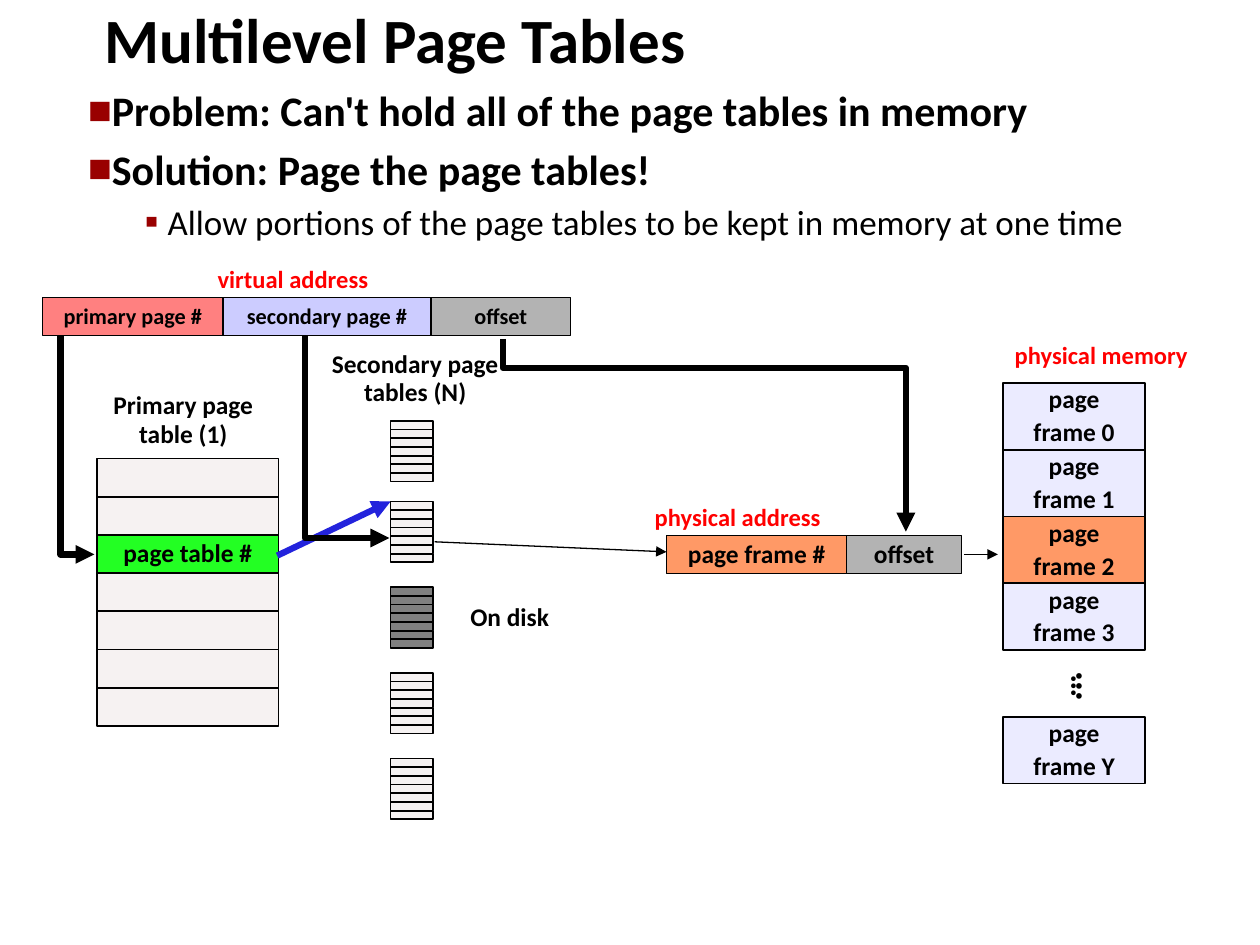
from lxml import etree
from pptx import Presentation
from pptx.dml.color import RGBColor
from pptx.enum.shapes import MSO_CONNECTOR, MSO_SHAPE
from pptx.enum.text import MSO_ANCHOR, MSO_AUTO_SIZE, PP_ALIGN
from pptx.oxml.ns import qn
from pptx.util import Inches, Pt

RECT, STRAIGHT = MSO_SHAPE.RECTANGLE, MSO_CONNECTOR.STRAIGHT
TOP, MIDDLE = MSO_ANCHOR.TOP, MSO_ANCHOR.MIDDLE
LEFT, CENTER = PP_ALIGN.LEFT, PP_ALIGN.CENTER
NO_FIT = MSO_AUTO_SIZE.NONE

# Content
FONT = "Calibri"
BLACK, RED, BLUE, MAROON = "000000", "FF0000", "2323DC", "990000"
PALE, GREY, DISK, LILAC, ORANGE, GREEN = (
    "F6F2F2", "B3B3B3", "808080", "EBEBFF", "FF9966", "23FF23")

TITLE = "Multilevel Page Tables"
# text, level, points, bullet, bullet size %, indent, hanging
POINTS = [
    ("Problem: Can't hold all of the page tables in memory", 0, 24, "■", 60, 0.28, 0.17),
    ("Solution: Page the page tables!", 0, 24, "■", 60, 0.28, 0.17),
    ("Allow portions of the page tables to be kept in memory at one time",
     1, 20, "▪", 110, 0.74, 0.18),
]
VIRTUAL_ADDRESS = [("primary page #", 1.43, "FF8080"),
                   ("secondary page #", 1.65, "CCCCFF"), ("offset", 1.11, GREY)]
PHYSICAL_ADDRESS = [("page frame #", 1.43, ORANGE), ("offset", 0.91, GREY)]
SECONDARY_TABLES = [(3.34, PALE), (3.98, PALE), (4.66, DISK), (5.34, PALE), (6.02, PALE)]
FRAMES = {0: "0", 1: "1", 2: "2", 3: "3", 5: "Y"}  # memory slot: frame name
USED_FRAME = 2
RED_LABELS = [("virtual address", (1.04, 2.06, 2.57, 0.3)),
              ("physical memory", (7.73, 2.66, 2.02, 0.3)),
              ("physical address", (4.76, 3.95, 2.19, 0.3))]
BLACK_LABELS = [(["Primary page", "table (1)"], (0.77, 3.11, 1.37, 0.47)),
                (["Secondary page", "tables (N)"], (2.48, 2.78, 1.63, 0.47)),
                (["On disk"], (3.62, 4.79, 0.85, 0.23))]
ELBOWS = [[(0.48, 2.66), (0.48, 4.4), (0.75, 4.4)],
          [(2.42, 2.66), (2.42, 4.27), (3.09, 4.27)],
          [(3.99, 2.69), (3.99, 2.92), (7.19, 2.92), (7.19, 4.22)]]
# start, end, colour, width
ARROWS = [((2.2, 4.41), (3.1, 3.98), BLUE, 3.6),
          ((7.65, 4.4), (7.92, 4.4), BLACK, 1),
          ((3.45, 4.3), (5.29, 4.38), BLACK, 0.75)]

# Grid, in inches
ROWS, LOOKUP_ROW = 7, 2
PRIMARY_X, PRIMARY_Y, PRIMARY_W, ROW_H = 0.77, 3.64, 1.44, 0.303
SECONDARY_X, SECONDARY_W, SMALL_ROW_H = 3.1, 0.34, 0.069
MEMORY_X, MEMORY_Y, FRAME_W, FRAME_H = 7.96, 3.04, 1.13, 0.53

prs = Presentation()
prs.slide_width, prs.slide_height = Inches(10), Inches(7.5)
slide = prs.slides.add_slide(prs.slide_layouts[1])
shapes = slide.shapes


def rgb(color):
    return RGBColor.from_string(color)


def place(shape, box):
    shape.left, shape.top, shape.width, shape.height = map(Inches, box)


def add_run(paragraph, text, size, color=BLACK, bold=True):
    run = paragraph.add_run()
    run.text = text
    font = run.font
    font.name, font.size, font.bold = FONT, Pt(size), bold
    font.color.rgb = rgb(color)


def write(shape, lines, size, color=BLACK, anchor=MIDDLE, align=CENTER,
          insets=(0.09, 0.05), spacing=0.97, before=1.8, wrap=True):
    frame = shape.text_frame
    frame.word_wrap, frame.vertical_anchor = wrap, anchor
    frame.margin_left = frame.margin_right = Inches(insets[0])
    frame.margin_top = frame.margin_bottom = Inches(insets[1])
    for i, line in enumerate(lines):
        paragraph = frame.add_paragraph() if i else frame.paragraphs[0]
        paragraph.alignment, paragraph.line_spacing = align, spacing
        paragraph.space_before = Pt(before)
        add_run(paragraph, line, size, color)


def label(lines, box, size, **style):
    text = shapes.add_textbox(*map(Inches, box))
    write(text, lines, size, **style)
    return text


def cell(box, fill, width=1.0, lines=(), size=14.5):
    rect = shapes.add_shape(RECT, *map(Inches, box))
    rect.shadow.inherit = False
    rect.fill.solid()
    rect.fill.fore_color.rgb = rgb(fill)
    rect.line.color.rgb, rect.line.width = rgb(BLACK), Pt(width)
    write(rect, lines, size)


def address(fields, x, y, size):
    for text, width, fill in fields:
        cell((x, y, width, ROW_H), fill, 0.75, [text], size)
        x += width


def arrowhead(shape, color, width):
    shape.line.color.rgb, shape.line.width = rgb(color), Pt(width)
    etree.SubElement(shape.line._get_or_add_ln(), qn("a:tailEnd"), type="triangle")


# Title and bullet points
title, body = slide.placeholders
place(title, (0.73, 0.08, 8.54, 0.51))
write(title, [TITLE], 36, align=LEFT, insets=(0.1, 0.05), spacing=0.94, before=0)
place(body, (0.49, 0.62, 9.31, 4.73))
title.text_frame.auto_size = body.text_frame.auto_size = NO_FIT
for i, (text, level, size, bullet, percent, indent, hanging) in enumerate(POINTS):
    frame = body.text_frame
    paragraph = frame.add_paragraph() if i else frame.paragraphs[0]
    paragraph.level, paragraph.space_before = level, Pt(size * 0.2)
    add_run(paragraph, text, size, bold=level == 0)
    props = paragraph._p.get_or_add_pPr()
    props.set("marL", str(Inches(indent)))
    props.set("indent", str(-Inches(hanging)))
    etree.SubElement(etree.SubElement(props, qn("a:buClr")), qn("a:srgbClr"), val=MAROON)
    etree.SubElement(props, qn("a:buSzPct"), val=str(percent * 1000))
    etree.SubElement(props, qn("a:buFont"), typeface=FONT)
    etree.SubElement(props, qn("a:buChar"), char=bullet)

# Primary page table
for row in range(ROWS):
    box = (PRIMARY_X, PRIMARY_Y + row * ROW_H, PRIMARY_W, ROW_H)
    if row == LOOKUP_ROW:
        cell(box, GREEN, 0.71, ["page table #"])
    else:
        cell(box, PALE)

# Addresses
address(VIRTUAL_ADDRESS, 0.34, 2.36, 12.7)
address(PHYSICAL_ADDRESS, 5.29, 4.25, 14.5)

# Blue and thin arrows
for start, end, color, width in ARROWS:
    arrow = shapes.add_connector(STRAIGHT, *map(Inches, start + end))
    arrowhead(arrow, color, width)
    etree.SubElement(arrow._element.spPr, qn("a:effectLst"))

# Secondary page tables
for top, fill in SECONDARY_TABLES:
    for row in range(ROWS):
        cell((SECONDARY_X, top + row * SMALL_ROW_H, SECONDARY_W, SMALL_ROW_H), fill)

# Physical memory, with dots for the frames left out
for slot, name in FRAMES.items():
    cell((MEMORY_X, MEMORY_Y + slot * FRAME_H, FRAME_W, FRAME_H),
         ORANGE if slot == USED_FRAME else LILAC, lines=["page", f"frame {name}"])
for dots in (
    label(["…"], (8.24, 5.25, 0.43, 0.39), 18.1, anchor=TOP, spacing=0.94, before=2.3),
    label(["..."], (8.33, 5.24, 0.3, 0.36), 21.8, anchor=TOP, align=LEFT,
          insets=(0, 0), spacing=0.98, before=0, wrap=False),
):
    dots.rotation = 270

# Labels
for text, box in RED_LABELS:
    label([text], box, 14, color=RED, anchor=TOP, before=1.6)
for lines, box in BLACK_LABELS:
    label(lines, box, 14.5, anchor=TOP, insets=(0, 0), spacing=0.94, before=0, wrap=False)

# Thick elbow arrows
for points in ELBOWS:
    start, *rest = [(Inches(x), Inches(y)) for x, y in points]
    builder = shapes.build_freeform(*start)
    builder.add_line_segments(rest, close=False)
    elbow = builder.convert_to_shape()
    elbow.shadow.inherit = False
    elbow.fill.background()
    arrowhead(elbow, BLACK, 3.6)

prs.save("out.pptx")
